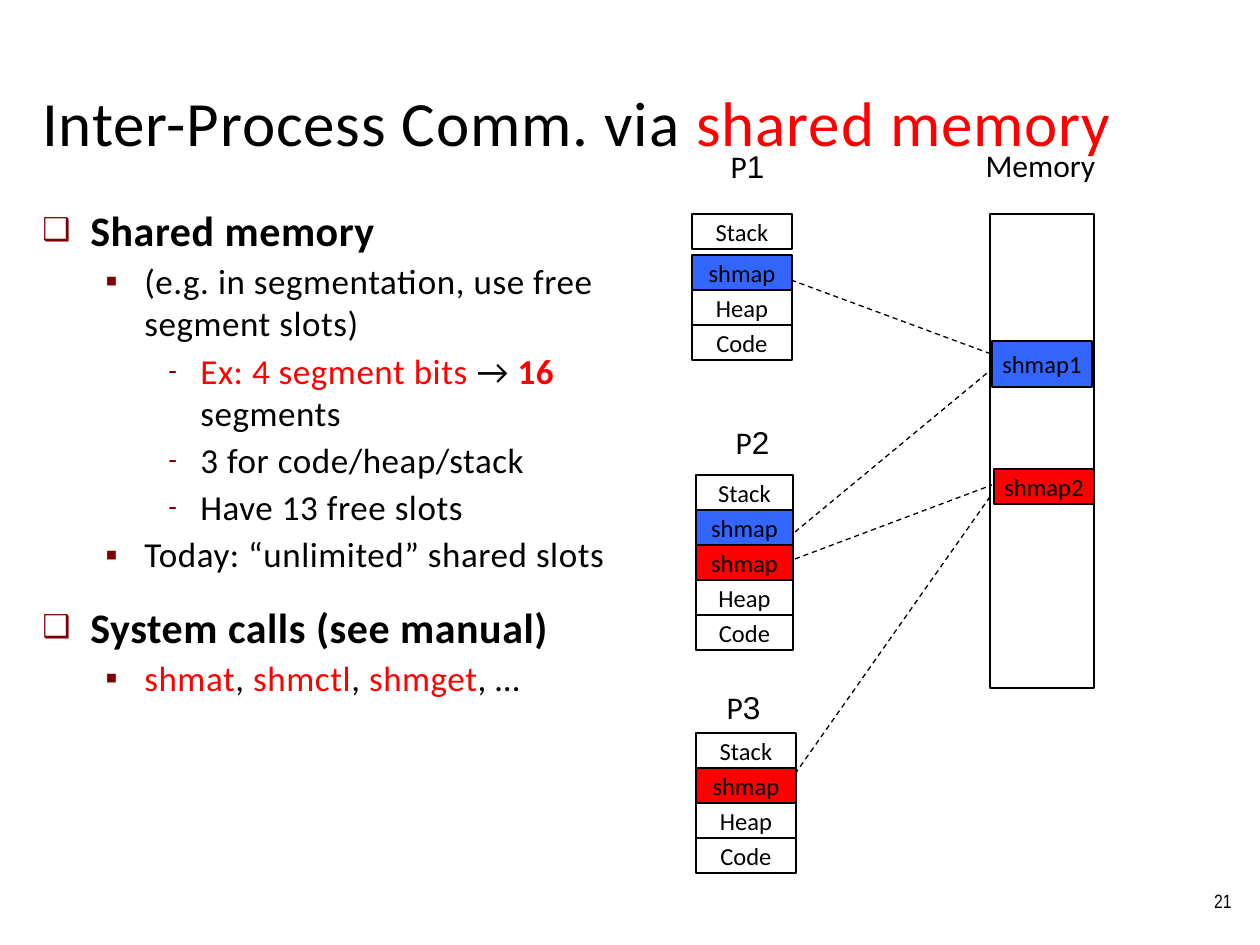
from lxml.etree import SubElement
from pptx import Presentation
from pptx.dml.color import RGBColor
from pptx.enum.dml import MSO_LINE
from pptx.enum.shapes import MSO_CONNECTOR, MSO_SHAPE
from pptx.enum.text import MSO_ANCHOR, PP_ALIGN
from pptx.oxml.ns import qn
from pptx.util import Emu, Pt

BLACK = RGBColor(0, 0, 0)
WHITE = RGBColor(255, 255, 255)
RED = RGBColor(255, 0, 0)
BLUE = RGBColor(0x33, 0x66, 0xFF)
MAROON = RGBColor(0x80, 0, 0)

PX = 914400 / 126
ROW_H = 35

TITLE = [("Inter-Process Comm. via ", {}), ("shared memory", {"color": RED})]
BODY = [
    (0, [("Shared memory", {})]),
    (1, [("(e.g. in segmentation, use free segment slots)", {})]),
    (2, [("Ex: 4 segment bits ", {"color": RED}), ("→ ", {}),
         ("16 ", {"color": RED, "bold": True}), ("segments", {})]),
    (2, [("3 for code/heap/stack", {})]),
    (2, [("Have 13 free slots", {})]),
    (1, [("Today: “unlimited” shared slots", {})]),
    (0, [("System calls (see manual)", {})]),
    (1, [("shmat", {"color": RED}), (", ", {}), ("shmctl", {"color": RED}),
         (", ", {}), ("shmget", {"color": RED}), (", …", {})]),
]
LEVELS = [
    {"size": 24, "bold": True, "before": 15, "left": 48, "hang": 48, "bullet": "❑", "pct": 75},
    {"size": 20, "bold": False, "before": 3, "left": 102, "hang": 39, "bullet": "▪", "pct": 100},
    {"size": 20, "bold": False, "before": 3, "left": 158, "hang": 32, "bullet": "-", "pct": 75},
]
PROCESSES = [
    {"number": "1", "label": (718, 141, 59, 50), "x": 692, "y": 214, "w": 100, "gap": 6,
     "shared": [BLUE]},
    {"number": "2", "label": (716, 417, 73, 50), "x": 696, "y": 475, "w": 97, "gap": 0,
     "shared": [BLUE, RED]},
    {"number": "3", "label": (707, 682, 73, 50), "x": 696, "y": 733, "w": 100, "gap": 0,
     "shared": [RED]},
]
MAPPINGS = [
    ((795, 774), (992, 494)),
    ((791, 280), (994, 355)),
    ((795, 532), (992, 369)),
    ((795, 559), (992, 485)),
]


def emu(*lengths):
    return [Emu(round(n * PX)) for n in lengths]


def add_runs(p, runs, size, bold=False, spacing=0):
    for text, changes in runs:
        r = p.add_run()
        r.text = text
        style = {"name": "Calibri", "size": Pt(size), "bold": bold, "color": BLACK, **changes}
        r.font.color.rgb = style.pop("color")
        for key, value in style.items():
            setattr(r.font, key, value)
        if spacing:
            r.font._element.set("spc", str(spacing))


def add_text(s, box, runs=(), size=18, align=PP_ALIGN.CENTER, anchor=MSO_ANCHOR.TOP,
             wrap=True, spacing=0):
    tf = s.shapes.add_textbox(*emu(*box)).text_frame
    tf.word_wrap, tf.vertical_anchor = wrap, anchor
    tf.paragraphs[0].alignment = align
    add_runs(tf.paragraphs[0], runs, size, spacing=spacing)
    return tf


def add_box(s, box, text="", color=None):
    sp = s.shapes.add_shape(MSO_SHAPE.RECTANGLE, *emu(*box))
    sp.shadow.inherit = False
    if color is None:
        sp.fill.background()
    else:
        sp.fill.solid()
        sp.fill.fore_color.rgb = color
    sp.line.color.rgb, sp.line.width = BLACK, Pt(0.75)
    if text:
        tf = sp.text_frame
        tf.word_wrap, tf.vertical_anchor = False, MSO_ANCHOR.MIDDLE
        tf.paragraphs[0].alignment = PP_ALIGN.CENTER
        add_runs(tf.paragraphs[0], [(text, {})], 14)


def add_mapping(s, start, end):
    line = s.shapes.add_connector(MSO_CONNECTOR.STRAIGHT, *emu(*start, *end))
    line.line.color.rgb, line.line.width = BLACK, Pt(0.75)
    line.line.dash_style = MSO_LINE.DASH
    SubElement(line._element.spPr, qn("a:effectLst"))


def add_body(s, box):
    tf = add_text(s, box, align=PP_ALIGN.LEFT)
    for i, (level, runs) in enumerate(BODY):
        p = tf.add_paragraph() if i else tf.paragraphs[0]
        look = LEVELS[level]
        p.level, p.space_before = level, Pt(look["before"])
        pPr = p._p.get_or_add_pPr()
        left, hang = emu(look["left"], look["hang"])
        pPr.set("marL", str(left))
        pPr.set("indent", str(-hang))
        SubElement(SubElement(pPr, qn("a:buClr")), qn("a:srgbClr"), val=str(MAROON))
        SubElement(pPr, qn("a:buSzPct"), val=str(look["pct"] * 1000))
        SubElement(pPr, qn("a:buFont"), typeface="Arial")
        SubElement(pPr, qn("a:buChar"), char=look["bullet"])
        add_runs(p, runs, look["size"], look["bold"], 30)


def add_process(s, proc):
    add_text(s, proc["label"], [("P", {}), (proc["number"], {"name": "Arial"})])
    shared = [("shmap", color) for color in proc["shared"]]
    rows = [("Stack", None), *shared, ("Heap", None), ("Code", None)]
    for i, (name, color) in enumerate(rows):
        y = proc["y"] + i * ROW_H + (proc["gap"] if i else 0)
        add_box(s, (proc["x"], y, proc["w"], ROW_H), name, color)


def main():
    prs = Presentation()
    prs.slide_width, prs.slide_height = emu(1260, 945)
    s = prs.slides.add_slide(prs.slide_layouts[6])
    add_text(s, (30, 39, 1198, 126), TITLE, 36, PP_ALIGN.LEFT, MSO_ANCHOR.BOTTOM, spacing=50)
    add_text(s, (1108, 876, 136, 50), [("21", {"name": "Arial Narrow"})], 11,
             PP_ALIGN.RIGHT, MSO_ANCHOR.MIDDLE)
    add_body(s, (30, 198, 602, 723))
    for proc in PROCESSES:
        add_process(s, proc)
    add_text(s, (973, 140, 135, 50), [("Memory", {})], wrap=False)
    add_box(s, (990, 214, 104, 474), color=WHITE)
    add_box(s, (994, 469, 100, ROW_H), "shmap2", RED)
    for start, end in MAPPINGS:
        add_mapping(s, start, end)
    add_box(s, (992, 341, 100, 46), "shmap1", BLUE)
    prs.save("out.pptx")


if __name__ == "__main__":
    main()
